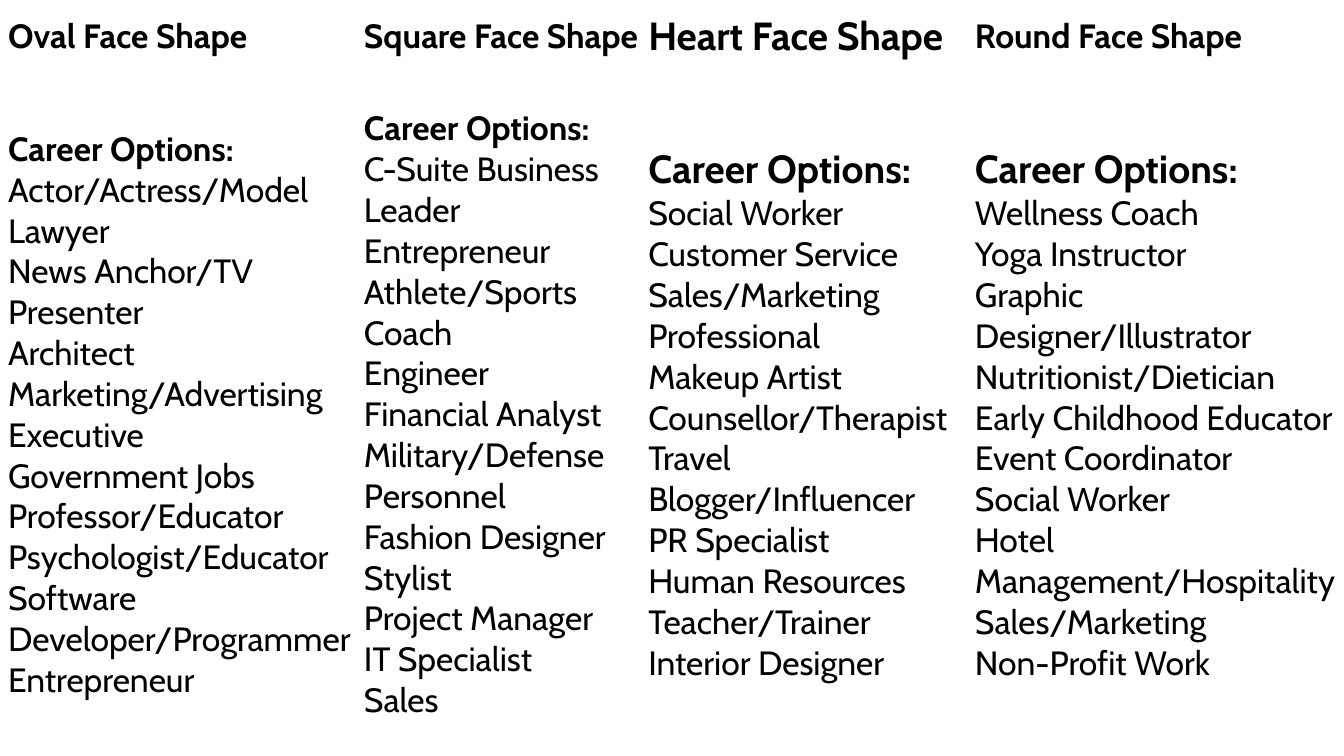
"""Build a slide that lists career options for four face shapes."""
import pptx
import pptx.dml.color
import pptx.enum.text
import pptx.util

Inches = pptx.util.Inches


def color(code):
    return pptx.dml.color.RGBColor.from_string(code)


def write(cell, lines):
    cell.fill.solid()
    cell.fill.fore_color.rgb = color("FFFFFF")
    cell.vertical_anchor = pptx.enum.text.MSO_ANCHOR.MIDDLE
    cell.margin_left = cell.margin_right = Inches(0.03)
    cell.margin_top = cell.margin_bottom = Inches(0.02)
    frame = cell.text_frame
    frame.text = "\n".join(text for text, size, bold in lines)
    for para, (text, size, bold) in zip(frame.paragraphs, lines):
        para.font.name = "Cabin"
        para.font.size = pptx.util.Pt(size)
        para.font.bold = bold
        para.font.color.rgb = color("000000")


faces = [
    ("Oval", 3.53, 24, 24, [
        "Actor/Actress/Model", "Lawyer", "News Anchor/TV Presenter",
        "Architect", "Marketing/Advertising Executive", "Government Jobs",
        "Professor/Educator", "Psychologist/Educator",
        "Software Developer/Programmer", "Entrepreneur"]),
    ("Square", 2.82, 24, 24, [
        "C-Suite Business Leader", "Entrepreneur", "Athlete/Sports Coach",
        "Engineer", "Financial Analyst", "Military/Defense Personnel",
        "Fashion Designer", "Stylist", "Project Manager", "IT Specialist",
        "Sales"]),
    ("Heart", 3.24, 28, 28, [
        "Social Worker", "Customer Service", "Sales/Marketing Professional",
        "Makeup Artist", "Counsellor/Therapist", "Travel Blogger/Influencer",
        "PR Specialist", "Human Resources", "Teacher/Trainer",
        "Interior Designer"]),
    ("Round", 3.66, 24, 28, [
        "Wellness Coach", "Yoga Instructor", "Graphic Designer/Illustrator",
        "Nutritionist/Dietician", "Early Childhood Educator",
        "Event Coordinator", "Social Worker", "Hotel Management/Hospitality",
        "Sales/Marketing", "Non-Profit Work"]),
]

deck = pptx.Presentation()
deck.slide_width = Inches(13.33)
deck.slide_height = Inches(7.5)
slide = deck.slides.add_slide(deck.slide_layouts[6])

frame = slide.shapes.add_table(
    2, len(faces), Inches(0.05), Inches(0), Inches(13.25), Inches(7.5))
table = frame.table
table.first_row = False
table.horz_banding = False
for row, height in zip(table.rows, (0.73, 6.77)):
    row.height = Inches(height)

for col, (face, width, head, label, jobs) in enumerate(faces):
    table.columns[col].width = Inches(width)
    write(table.cell(0, col), [(f"{face} Face Shape", head, True)])
    write(table.cell(1, col), [("Career Options:", label, True)]
          + [(job, 24, False) for job in jobs])

deck.save("out.pptx")
